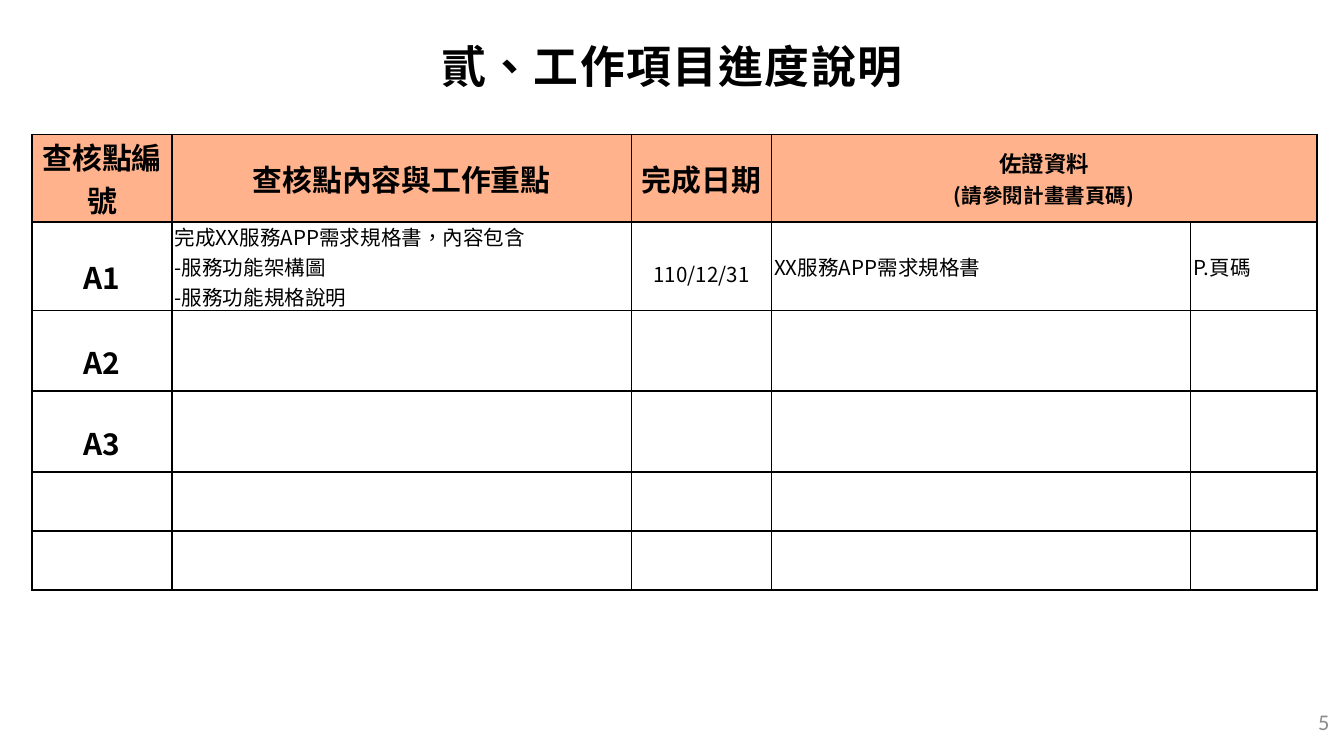
from lxml import etree
from pptx import Presentation
from pptx.dml.color import RGBColor
from pptx.enum.lang import MSO_LANGUAGE_ID
from pptx.enum.text import MSO_ANCHOR, PP_ALIGN
from pptx.oxml.ns import qn
from pptx.util import Inches, Pt

LEFT, CENTER, RIGHT = PP_ALIGN.LEFT, PP_ALIGN.CENTER, PP_ALIGN.RIGHT
MIDDLE = MSO_ANCHOR.MIDDLE
TAIWAN_CHINESE = MSO_LANGUAGE_ID.TAIWAN if hasattr(MSO_LANGUAGE_ID, "TAIWAN") \
    else MSO_LANGUAGE_ID.TRADITIONAL_CHINESE

BLACK = RGBColor(0x00, 0x00, 0x00)
GRAY = RGBColor(0x8C, 0x8C, 0x8C)
PEACH = RGBColor(0xFF, 0xB2, 0x8B)
CJK_FONT = "Noto Sans CJK SC"

# A 16:9 slide
SLIDE_WIDTH = 10
SLIDE_HEIGHT = SLIDE_WIDTH * 9 / 16
COLUMN_WIDTHS = [1.04, 3.42, 1.04, 3.12, 0.94]
ROW_HEIGHTS = [0.65, 0.66, 0.6, 0.6, 0.44, 0.44]

HEADERS = ["查核點編號", "查核點內容與工作重點", "完成日期"]
CHECKPOINTS = ["A1", "A2", "A3"]
FIRST_ROW_DETAILS = [
    ["完成XX服務APP需求規格書，內容包含", "-服務功能架構圖", "-服務功能規格說明"],
    ["110/12/31"],
    ["XX服務APP需求規格書"],
    ["P.頁碼"],
]
DATE_COLUMN = 2


def write_text(frame, lines, sizes=(11,), font=CJK_FONT, color=BLACK, bold=False,
               align=LEFT, line_spacing=None, tracking=None):
    """Write one paragraph per line; the last size serves the remaining lines."""
    for index, line in enumerate(lines):
        paragraph = frame.paragraphs[0] if index == 0 else frame.add_paragraph()
        paragraph.alignment = align
        if line_spacing:
            paragraph.line_spacing = line_spacing
        run = paragraph.add_run()
        run.text = line
        run.font.size = Pt(sizes[min(index, len(sizes) - 1)])
        run.font.name = font
        run.font.bold = bold
        run.font.color.rgb = color
        run.font.language_id = TAIWAN_CHINESE
        properties = run._r.get_or_add_rPr()
        properties.set("altLang", "en-US")
        etree.SubElement(properties, qn("a:ea"), typeface=font)
        if tracking:
            properties.set("spc", str(int(tracking * 100)))


def add_label(slide, left, top, width, height, text, **text_format):
    frame = slide.shapes.add_textbox(
        Inches(left), Inches(top), Inches(width), Inches(height)).text_frame
    frame.word_wrap = True
    frame.vertical_anchor = MIDDLE
    write_text(frame, [text], **text_format)


def add_borders(cell, width=1):
    """Draw all four edges; borders must precede the cell's fill in the XML."""
    properties = cell._tc.get_or_add_tcPr()
    for position, edge in enumerate(("a:lnL", "a:lnR", "a:lnT", "a:lnB")):
        line = etree.Element(qn(edge), w=str(Pt(width)))
        fill = etree.SubElement(line, qn("a:solidFill"))
        etree.SubElement(fill, qn("a:srgbClr"), val=str(BLACK))
        properties.insert(position, line)


def style_cell(cell, is_header):
    cell.margin_left = cell.margin_right = Inches(0.02)
    cell.margin_top = cell.margin_bottom = 0
    cell.vertical_anchor = MIDDLE
    if is_header:
        cell.fill.solid()
        cell.fill.fore_color.rgb = PEACH
    else:
        cell.fill.background()
    add_borders(cell)


def add_progress_table(slide):
    table = slide.shapes.add_table(
        len(ROW_HEIGHTS), len(COLUMN_WIDTHS), Inches(0.24), Inches(1),
        Inches(sum(COLUMN_WIDTHS)), Inches(sum(ROW_HEIGHTS))).table
    for column, width in zip(table.columns, COLUMN_WIDTHS):
        column.width = Inches(width)
    for index, (row, height) in enumerate(zip(table.rows, ROW_HEIGHTS)):
        row.height = Inches(height)
        for cell in row.cells:
            style_cell(cell, is_header=index == 0)

    # Header row, with the evidence heading over two columns
    for column, header in enumerate(HEADERS):
        write_text(table.cell(0, column).text_frame, [header],
                   sizes=(16,), bold=True, align=CENTER)
    evidence = table.cell(0, len(HEADERS))
    evidence.merge(table.cell(0, len(COLUMN_WIDTHS) - 1))
    write_text(evidence.text_frame, ["佐證資料", "(請參閱計畫書頁碼)"],
               sizes=(12, 11), bold=True, align=CENTER)

    # Checkpoint numbers
    for row, checkpoint in enumerate(CHECKPOINTS, start=1):
        write_text(table.cell(row, 0).text_frame, [checkpoint], sizes=(16,),
                   bold=True, align=CENTER, line_spacing=1.5)

    # Details of the first checkpoint
    for column, lines in enumerate(FIRST_ROW_DETAILS, start=1):
        is_date = column == DATE_COLUMN
        write_text(table.cell(1, column).text_frame, lines,
                   align=CENTER if is_date else LEFT,
                   line_spacing=1.5 if is_date else None)


def main():
    presentation = Presentation()
    presentation.slide_width = Inches(SLIDE_WIDTH)
    presentation.slide_height = Inches(SLIDE_HEIGHT)
    slide = presentation.slides.add_slide(presentation.slide_layouts[6])

    # Page number and title
    add_label(slide, 7.74, 5.22, 2.25, 0.3, "5", sizes=(12,), font="Calibri",
              color=GRAY, align=RIGHT)
    add_label(slide, 0, 0.06, SLIDE_WIDTH, 0.85, "貳、工作項目進度說明",
              sizes=(24,), bold=True, align=CENTER, tracking=0.8)

    add_progress_table(slide)
    presentation.save("out.pptx")


if __name__ == "__main__":
    main()
